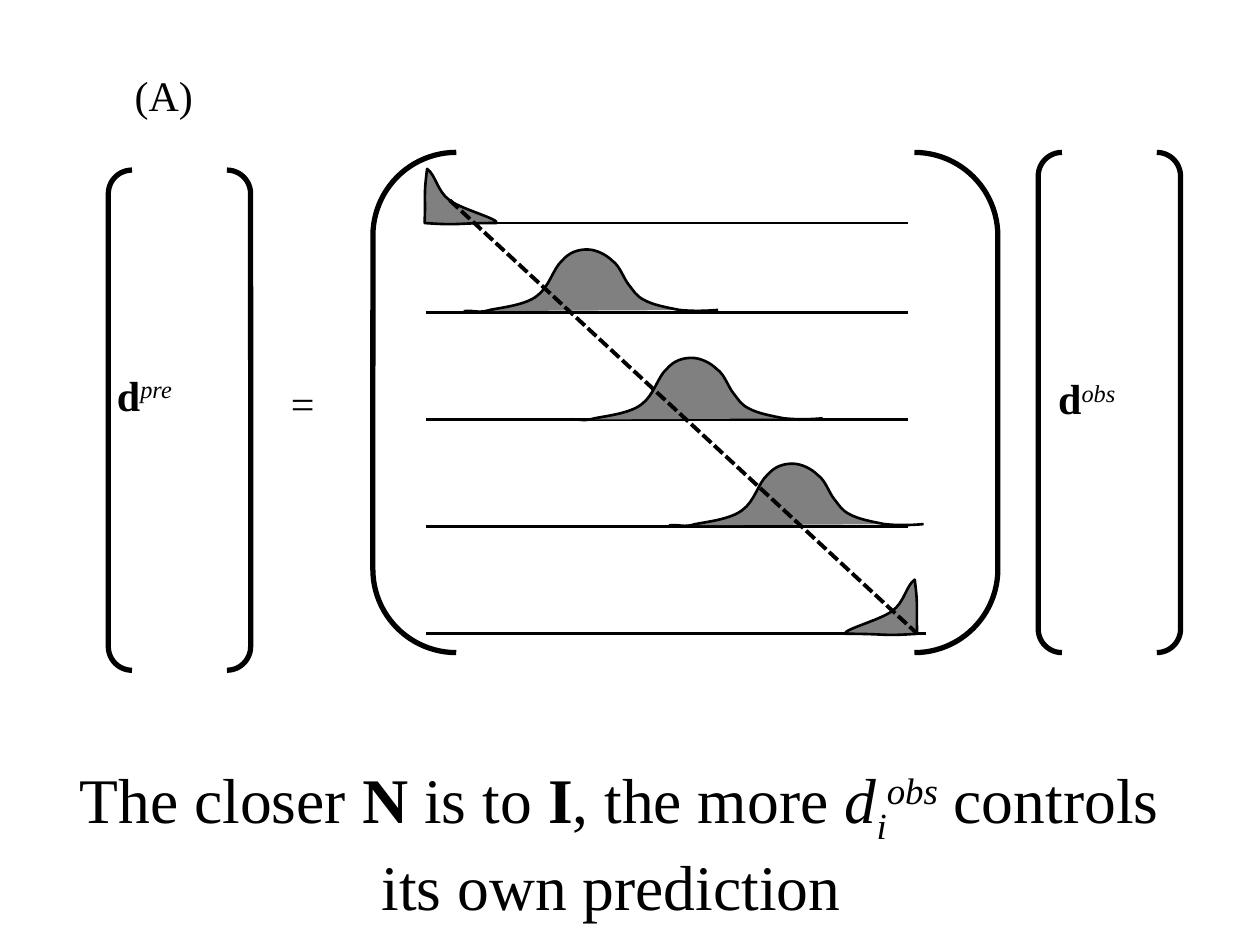
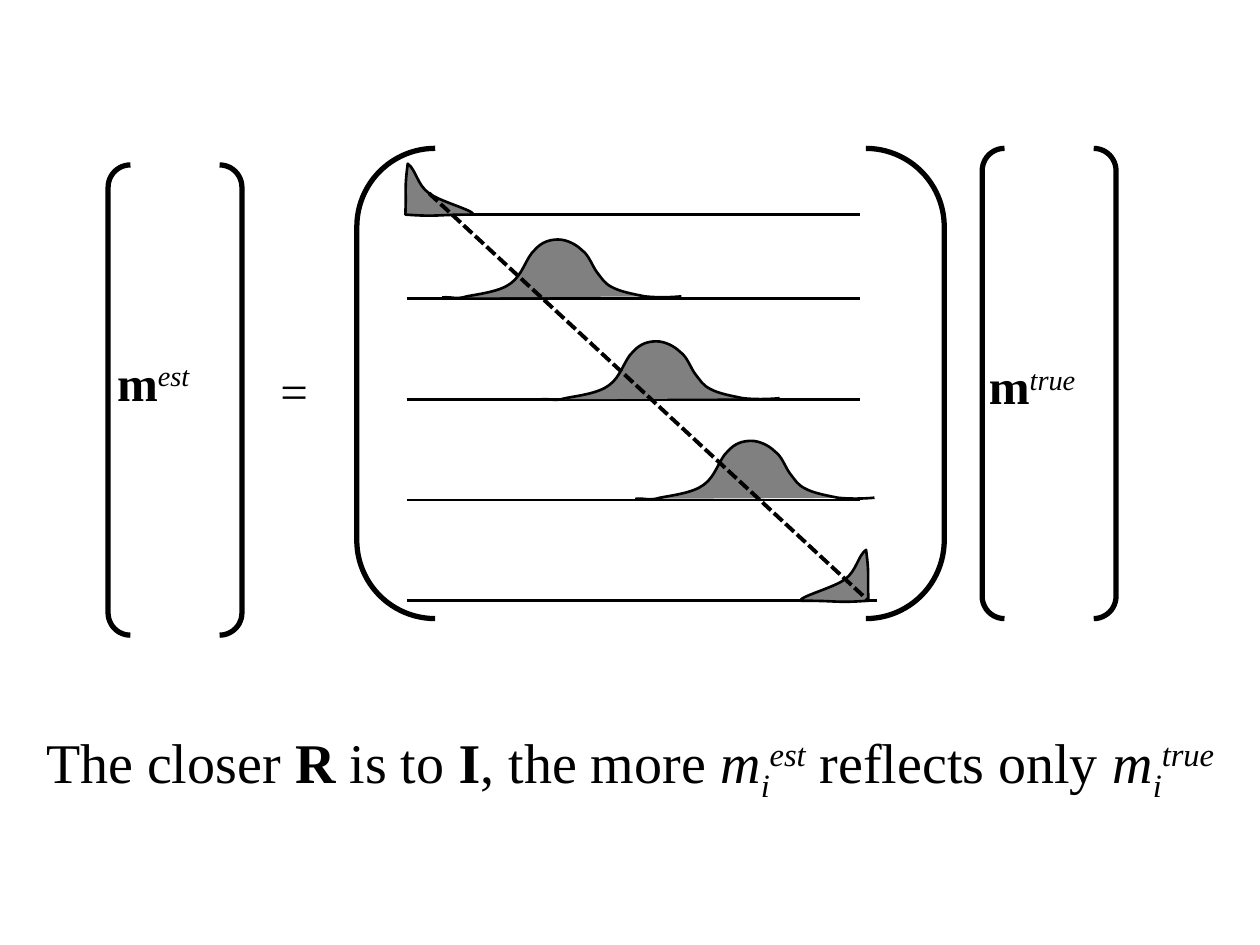
from dataclasses import dataclass
from typing import NamedTuple

import lxml.etree
import pptx
import pptx.dml.color
import pptx.enum.dml
import pptx.enum.shapes
import pptx.enum.text
import pptx.oxml
import pptx.oxml.ns
import pptx.util
from pptx.util import Inches

COLORS = {"ink": "000000", "curve": "808080", "page": "FFFFFF"}
FONT = "Times New Roman"
SUPER, SUB = 30000, -25000

Point = tuple[float, float]


class Span(NamedTuple):
    text: str
    bold: bool = False
    italic: bool = False
    baseline: int = 0


class Frame(NamedTuple):
    left: float
    top: float
    width: float
    height: float


@dataclass
class Diagram:
    """A matrix equation, with its layout scaled and shifted as a whole."""
    scale: float
    shift: Point
    label_size: float
    left_vector: list[Span]
    right_vector: list[Span]
    right_label_left: float

    def place(self, x: float, y: float) -> Point:
        return self.scale * x + self.shift[0], self.scale * y + self.shift[1]


@dataclass
class Caption:
    frame: Frame
    top_inset: float
    size: float
    spans: list[Span]


BRACKETS = [Frame(2.96, 1.21, 4.96, 3.97), Frame(8.24, 1.21, 1.13, 3.97),
            Frame(0.86, 1.35, 1.13, 3.97)]
ROW_LEFT, ROW_RIGHT = 3.38, 7.21
ROW_YS = [1.77, 2.48, 3.33, 4.18, 5.03]
LAST_ROW_RIGHT = 7.35
DIAGONAL = ((3.57, 1.59), (7.28, 5.03))

# Bezier points: a start, then two controls and an end for each segment.
BELL = [(0, 0), (.09, -.01), (.11, .02), (.21, -.01), (.31, -.03), (.49, -.05),
        (.58, -.12), (.68, -.19), (.71, -.34), (.78, -.4), (.84, -.47),
        (.91, -.49), (.98, -.49), (1.05, -.49), (1.13, -.45), (1.18, -.4),
        (1.24, -.36), (1.27, -.26), (1.31, -.21), (1.35, -.16), (1.37, -.12),
        (1.43, -.09), (1.5, -.05), (1.61, -.03), (1.71, -.01), (1.8, 0),
        (1.91, 0), (2.02, -.01)]
BELL_STARTS = [(3.68, 2.47), (4.51, 3.33), (5.31, 4.17)]
WEDGE = [(.03, 0), (.1, .05), (.11, .18), (.21, .25), (.3, .32), (.61, .4),
         (.58, .43), (.24, .43), (.3, .45), (.01, .43), (.02, .21), (0, .23),
         (.03, 0)]
FIRST_WEDGE, LAST_WEDGE = (3.36, 1.34), (7.29, 4.6)


def color(name: str) -> pptx.dml.color.RGBColor:
    return pptx.dml.color.RGBColor.from_string(COLORS[name])


def style_line(line, width: float) -> None:
    line.color.rgb = color("ink")
    line.width = pptx.util.Pt(width)


def write_spans(para, spans: list[Span], size: float) -> None:
    for span in spans:
        run = para.add_run()
        run.text = span.text
        font = run.font
        font.name, font.size = FONT, pptx.util.Pt(size)
        font.bold, font.italic = span.bold, span.italic
        font.color.rgb = color("ink")
        if span.baseline:
            run._r.get_or_add_rPr().set("baseline", str(span.baseline))


def add_label(page, corner: Point, width: float, spans: list[Span], size: float) -> None:
    box = page.shapes.add_textbox(*map(Inches, (*corner, width, size / 48)))
    box.text_frame.word_wrap = True
    write_spans(box.text_frame.paragraphs[0], spans, size)


def add_line(page, start: Point, end: Point, width: float = 1.5, dashed: bool = False) -> None:
    line = page.shapes.add_connector(
        pptx.enum.shapes.MSO_CONNECTOR.STRAIGHT, *map(Inches, (*start, *end)))
    style_line(line.line, width)
    if dashed:
        line.line.dash_style = pptx.enum.dml.MSO_LINE.SQUARE_DOT
    line._element.spPr.append(pptx.oxml.parse_xml(
        '<a:effectLst xmlns:a="http://schemas.openxmlformats.org/drawingml/2006/main"/>'))


def bend_segments(shape) -> None:
    """Turn each three straight segments of a freeform into one cubic Bezier."""
    qn = pptx.oxml.ns.qn
    outline = shape._element.spPr.find(".//" + qn("a:path"))
    straights = outline.findall(qn("a:lnTo"))
    for first in range(0, len(straights), 3):
        bend = lxml.etree.Element(qn("a:cubicBezTo"))
        straights[first].addprevious(bend)
        for straight in straights[first:first + 3]:
            bend.append(straight[0])
            outline.remove(straight)


def add_curve(page, diagram: Diagram, start: Point, bezier: list[Point],
              mirrored: bool = False, closed: bool = False) -> None:
    side = -1 if mirrored else 1
    points = [tuple(map(Inches, diagram.place(start[0] + side * x, start[1] + y)))
              for x, y in bezier]
    builder = page.shapes.build_freeform(*points[0])
    builder.add_line_segments(points[1:], close=closed)
    curve = builder.convert_to_shape()
    bend_segments(curve)
    curve.shadow.inherit = False
    curve.fill.solid()
    curve.fill.fore_color.rgb = color("curve")
    style_line(curve.line, 1.5)


def add_diagram(page, diagram: Diagram) -> None:
    for frame in BRACKETS:
        size = (diagram.scale * frame.width, diagram.scale * frame.height)
        bracket = page.shapes.add_shape(
            pptx.enum.shapes.MSO_SHAPE.DOUBLE_BRACKET,
            *map(Inches, (*diagram.place(frame.left, frame.top), *size)))
        bracket.shadow.inherit = False
        bracket.fill.background()
        style_line(bracket.line, 3)

    label_width = 1.17 * diagram.scale
    right_corner = (diagram.right_label_left, diagram.place(0, 2.91)[1])
    for corner, spans in ((diagram.place(0.83, 2.88), diagram.left_vector),
                          (diagram.place(2.21, 2.95), [Span("=")]),
                          (right_corner, diagram.right_vector)):
        add_label(page, corner, label_width, spans, diagram.label_size)

    for y in ROW_YS:
        right = LAST_ROW_RIGHT if y == ROW_YS[-1] else ROW_RIGHT
        add_line(page, diagram.place(ROW_LEFT, y), diagram.place(right, y))
    for start in BELL_STARTS:
        add_curve(page, diagram, start, BELL)
    add_curve(page, diagram, FIRST_WEDGE, WEDGE, closed=True)
    add_curve(page, diagram, LAST_WEDGE, WEDGE, mirrored=True, closed=True)
    add_line(page, *(diagram.place(*end) for end in DIAGONAL), width=2.25, dashed=True)


def set_caption(page, caption: Caption) -> None:
    title = page.shapes.title
    title.left, title.top, title.width, title.height = map(Inches, caption.frame)
    text = title.text_frame
    text.word_wrap = True
    text.auto_size = pptx.enum.text.MSO_AUTO_SIZE.NONE
    text.vertical_anchor = pptx.enum.text.MSO_ANCHOR.TOP
    text.margin_top = Inches(caption.top_inset)
    para = text.paragraphs[0]
    para.alignment = pptx.enum.text.PP_ALIGN.CENTER
    write_spans(para, caption.spans, caption.size)


def vector(letter: str, exponent: str) -> list[Span]:
    return [Span(letter, bold=True), Span(exponent, italic=True, baseline=SUPER)]


def element(letter: str, exponent: str) -> list[Span]:
    return [Span(letter, italic=True), Span("i", italic=True, baseline=SUB),
            Span(exponent, italic=True, baseline=SUPER)]


def closeness(matrix: str) -> list[Span]:
    return [Span("The closer "), Span(matrix + " ", bold=True), Span("is to "),
            Span("I", bold=True), Span(", the more ")]


def add_page(deck, diagram: Diagram, caption: Caption):
    page = deck.slides.add_slide(deck.slide_layouts[5])
    page.background.fill.solid()
    page.background.fill.fore_color.rgb = color("page")
    add_diagram(page, diagram)
    set_caption(page, caption)
    return page


def main() -> None:
    deck = pptx.Presentation()
    deck.slide_width, deck.slide_height = Inches(10), Inches(7.5)

    data_page = add_page(
        deck,
        Diagram(1, (0, 0), 24, vector("d", "pre"), vector("d", "obs"), 8.3),
        Caption(Frame(0.5, 5.58, 8.83, 1.58), 0.45, 36.3,
                closeness("N") + element("d", "obs")
                + [Span(" controls its own prediction ")]))
    add_label(data_page, (0.97, 0.5), 1.27, [Span("(A)")], 24)

    add_page(
        deck,
        Diagram(0.94, (0.05, 0.04), 28, vector("m", "est"), vector("m", "true"), 7.75),
        Caption(Frame(0, 5.42, 10, 0.94), 0.35, 32,
                closeness("R") + element("m", "est") + [Span(" reflects only ")]
                + element("m", "true")))

    deck.save("out.pptx")


if __name__ == "__main__":
    main()
